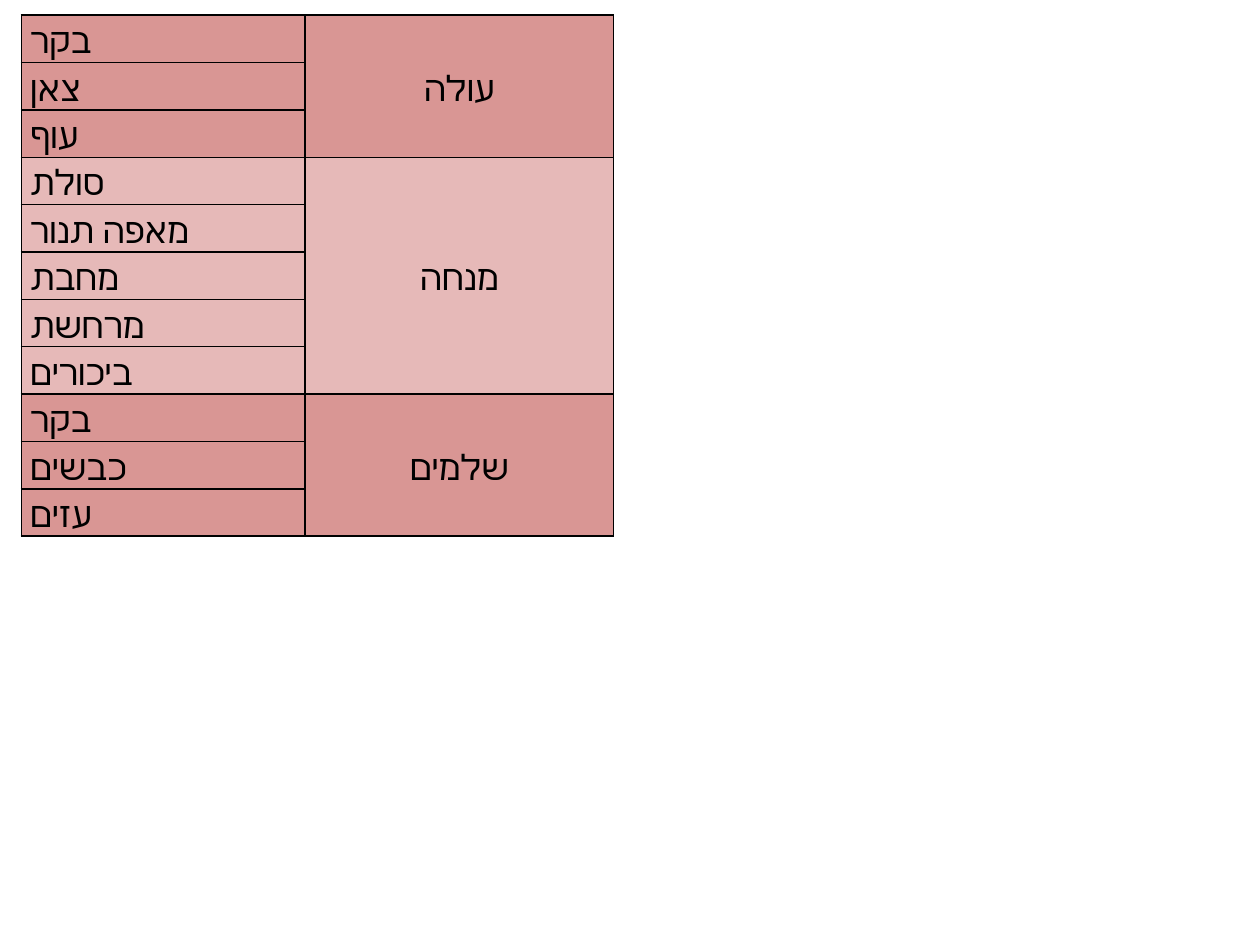
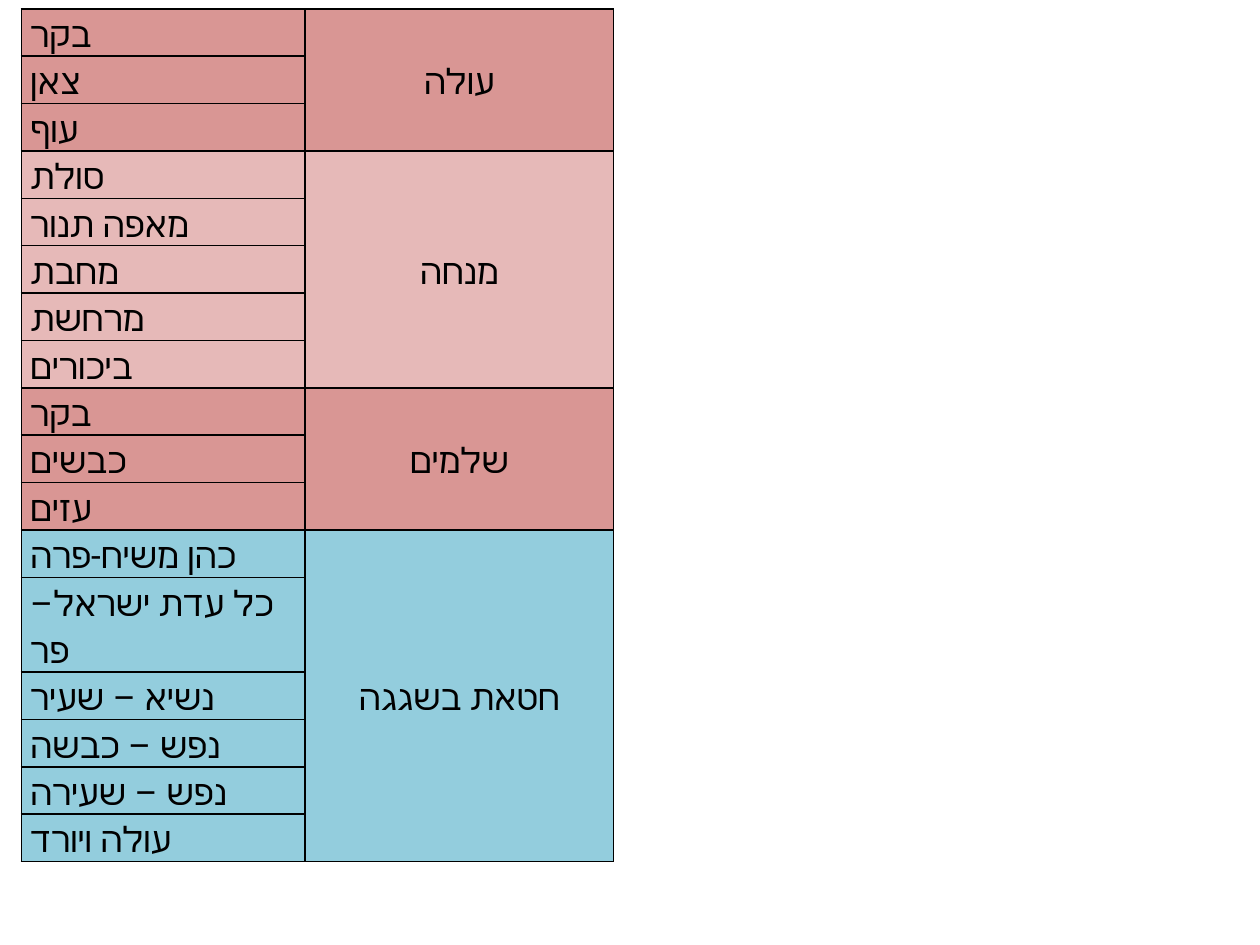
from lxml import etree
from pptx import Presentation
from pptx import util as u
from pptx.dml.color import RGBColor
from pptx.enum import text
from pptx.oxml.ns import qn

COLORS = {"ink": "000000", "rose": "D99694", "blush": "E6B9B8", "sky": "93CDDD"}
FONT = "Roboto"
COLUMN_WIDTHS = (2.25, 2.45)
ROW_HEIGHT = 0.37
TABLE_LEFT = 0.17

# Each group: offering, fill, kinds
OFFERINGS = [
    ("עולה", "rose", ["בקר", "צאן", "עוף"]),
    ("מנחה", "blush", ["סולת", "מאפה תנור", "מחבת", "מרחשת", "ביכורים"]),
    ("שלמים", "rose", ["בקר", "כבשים", "עזים"]),
]
SIN_OFFERING = (
    "חטאת בשגגה",
    "sky",
    ["כהן משיח-פרה", "כל עדת ישראל– פר", "נשיא – שעיר",
     "נפש – כבשה", "נפש – שעירה", "עולה ויורד"],
)
# Each slide: top of its table, groups
SLIDES = [(0.12, OFFERINGS), (0.07, OFFERINGS + [SIN_OFFERING])]


def format_cell(cell, fill):
    """Give a cell its black borders, fill and insets."""
    properties = cell._tc.get_or_add_tcPr()
    for side in ("a:lnL", "a:lnR", "a:lnT", "a:lnB"):
        line = etree.SubElement(properties, qn(side), w=str(u.Pt(1)))
        solid = etree.SubElement(line, qn("a:solidFill"))
        etree.SubElement(solid, qn("a:srgbClr"), val=COLORS["ink"])
    cell.fill.solid()
    cell.fill.fore_color.rgb = RGBColor.from_string(COLORS[fill])
    cell.margin_left = cell.margin_right = u.Inches(0.07)
    cell.margin_top = cell.margin_bottom = 0


def write_cell(cell, words, alignment):
    cell.text = words
    paragraph = cell.text_frame.paragraphs[0]
    paragraph.alignment = alignment
    paragraph.line_spacing = 1.15
    font = paragraph.runs[0].font
    font.size = u.Pt(20)
    font.name = FONT
    font.color.rgb = RGBColor.from_string(COLORS["ink"])
    # Hebrew takes the complex-script typeface
    etree.SubElement(font._element, qn("a:cs"), typeface=FONT)


presentation = Presentation()
presentation.slide_width = u.Inches(10)
presentation.slide_height = u.Inches(7.5)

for top, groups in SLIDES:
    slide = presentation.slides.add_slide(presentation.slide_layouts[6])
    row_count = sum(len(kinds) for _, _, kinds in groups)
    table = slide.shapes.add_table(
        row_count, len(COLUMN_WIDTHS), u.Inches(TABLE_LEFT), u.Inches(top),
        u.Inches(sum(COLUMN_WIDTHS)), u.Inches(ROW_HEIGHT * row_count),
    ).table
    table.first_row = table.horz_banding = False
    for column, width in zip(table.columns, COLUMN_WIDTHS):
        column.width = u.Inches(width)

    first = 0
    for offering, fill, kinds in groups:
        for row, kind in enumerate(kinds, first):
            for column in range(len(COLUMN_WIDTHS)):
                format_cell(table.cell(row, column), fill)
            write_cell(table.cell(row, 0), kind, text.PP_ALIGN.LEFT)
        offering_cell = table.cell(first, 1)
        offering_cell.merge(table.cell(first + len(kinds) - 1, 1))
        offering_cell.vertical_anchor = text.MSO_ANCHOR.MIDDLE
        write_cell(offering_cell, offering, text.PP_ALIGN.CENTER)
        first += len(kinds)

presentation.save("out.pptx")
